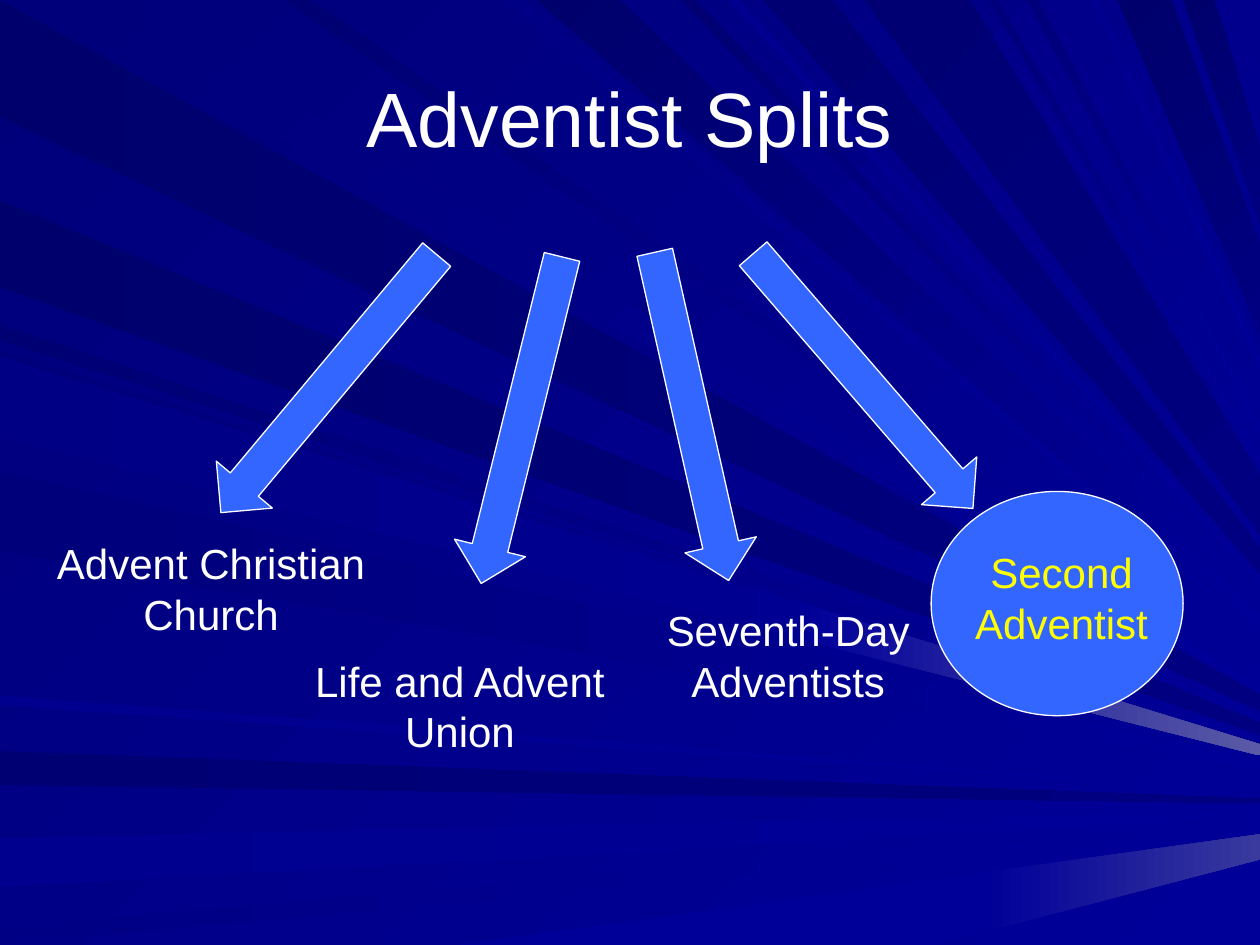
from pptx import Presentation
from pptx.dml.color import RGBColor
from pptx.enum.shapes import MSO_SHAPE
from pptx.enum.text import MSO_ANCHOR, PP_ALIGN
from pptx.util import Inches, Pt

WHITE = RGBColor(0xFF, 0xFF, 0xFF)
YELLOW = RGBColor(0xFF, 0xFF, 0x00)
BLUE = RGBColor(0x33, 0x66, 0xFF)
BLACK_BLUE = RGBColor(0x00, 0x00, 0x6C)
MIDNIGHT = RGBColor(0x00, 0x00, 0x73)
NIGHT = RGBColor(0x00, 0x00, 0x7A)
DUSK = RGBColor(0x00, 0x00, 0x85)
DAWN = RGBColor(0x00, 0x00, 0x8E)
NAVY = RGBColor(0x00, 0x00, 0x80)
ROYAL = RGBColor(0x00, 0x00, 0x99)
INDIGO = RGBColor(0x39, 0x39, 0x9E)
LILAC = RGBColor(0x5A, 0x5A, 0xA6)

WIDTH, HEIGHT = 10, 7.5
# All rays run towards one point beyond the right edge
FOCUS_X, FOCUS_Y = 11.6, 6.4

# Edge a ray starts from, its two ends on that edge, and its colours
RAYS = [
    ("left", 0, 0.93, BLACK_BLUE, NAVY),
    ("top", 0.26, 1, NIGHT, ROYAL),
    ("left", 5.96, 6.23, MIDNIGHT, NAVY),
    ("left", 6.65, 7.04, DAWN, ROYAL),
    ("left", 7.35, 7.5, DUSK, ROYAL),
    ("bottom", 3.64, 7.42, ROYAL, ROYAL),
    ("left", 2.58, 2.7, MIDNIGHT, ROYAL),
    ("left", 1.59, 2.28, BLACK_BLUE, NAVY),
    ("top", 3.98, 4.16, DUSK, ROYAL),
    ("top", 4.26, 4.92, BLACK_BLUE, ROYAL),
    ("top", 5.4, 5.52, MIDNIGHT, ROYAL),
    ("top", 6.06, 6.61, MIDNIGHT, NAVY),
    ("top", 8.87, 9.3, BLACK_BLUE, NAVY),
    ("top", 9.39, 9.64, BLACK_BLUE, NAVY),
    ("left", 2.78, 3.42, NIGHT, ROYAL),
    ("left", 3.74, 4.37, NIGHT, ROYAL),
    ("left", 5.52, 5.6, DAWN, ROYAL),
    ("top", 2.25, 2.47, MIDNIGHT, ROYAL),
    ("top", 5.77, 5.88, DAWN, ROYAL),
    ("top", 6.86, 7.7, MIDNIGHT, NAVY),
    ("top", 7.85, 7.92, NIGHT, ROYAL),
    ("top", 8.15, 8.24, NIGHT, ROYAL),
    ("top", 8.65, 8.72, DAWN, ROYAL),
    ("left", 2.83, 3.47, DUSK, ROYAL),
]
# The same for the glowing tips, then where each one begins
TIPS = [
    ("bottom", 3.64, 7.42, ROYAL, INDIGO, 7.8),
    ("left", 2.83, 3.47, ROYAL, LILAC, 6.35),
]

# Left, top and rotation of each arrow
ARROWS = [(2.32, 1.71, 39.9), (3.85, 2, 13.9), (5.2, 1.97, 347.3), (6.56, 1.69, 319.2)]
ARROW_WIDTH, ARROW_HEIGHT = Inches(0.58), Inches(2.67)

# Name, left, top, width and colour of each branch
BRANCHES = [
    ("Advent Christian\nChurch", 0.34, 4.22, 2.67, WHITE),
    ("Life and Advent\nUnion", 2.39, 5.15, 2.52, WHITE),
    ("Second\nAdventist", 7.63, 4.29, 1.59, YELLOW),
    ("Seventh-Day\nAdventists", 5.18, 4.75, 2.15, WHITE),
]
BRANCH_HEIGHT = Inches(0.91)


def fill_gradient(fill, start, end, clockwise_angle):
    fill.gradient()
    fill.gradient_angle = -clockwise_angle % 360
    for stop, color in zip(fill.gradient_stops, (start, end)):
        stop.color.rgb = color


def edge_point(edge, offset):
    return {"left": (0, offset), "top": (offset, 0), "bottom": (offset, HEIGHT)}[edge]


def toward_focus(point, x):
    """The point at x on the line from the given point to the focus."""
    start_x, start_y = point
    share = (x - start_x) / (FOCUS_X - start_x)
    return x, start_y + share * (FOCUS_Y - start_y)


def draw_ray(slide, left, top, edge, first, second, near, far, begin=None):
    near_ends = [edge_point(edge, first), edge_point(edge, second)]
    far_ends = [toward_focus(point, WIDTH) for point in near_ends]
    if begin is not None:
        near_ends = [toward_focus(point, begin) for point in near_ends]
    corners = [(left + Inches(x), top + Inches(y)) for x, y in near_ends + far_ends[::-1]]
    builder = slide.shapes.build_freeform(*corners[0])
    builder.add_line_segments(corners[1:], close=True)
    ray = builder.convert_to_shape()
    ray.shadow.inherit = False
    ray.line.fill.background()
    fill_gradient(ray.fill, near, far, 45 if edge == "top" else 0)


def draw_rays(slide, left, top):
    for ray in RAYS + TIPS:
        draw_ray(slide, left, top, *ray)


def add_label(slide, text, left, top, width, height, size, color, wrap=False):
    label = slide.shapes.add_textbox(left, top, width, height)
    frame = label.text_frame
    frame.word_wrap = wrap
    frame.text = text
    for paragraph in frame.paragraphs:
        paragraph.alignment = PP_ALIGN.CENTER
        paragraph.font.name = "Arial"
        paragraph.font.size = Pt(size)
        paragraph.font.color.rgb = color
    return label


def add_outlined(slide, kind, left, top, width, height):
    outlined = slide.shapes.add_shape(kind, left, top, width, height)
    outlined.shadow.inherit = False
    outlined.fill.solid()
    outlined.fill.fore_color.rgb = BLUE
    outlined.line.color.rgb = WHITE
    outlined.line.width = Pt(0.75)
    return outlined


def draw_title(slide, left, top, width, height):
    title = add_label(slide, "Adventist Splits", left, top, width, height, 44, WHITE, wrap=True)
    title.text_frame.vertical_anchor = MSO_ANCHOR.MIDDLE


def draw_splits(slide, left, top):
    """Arrows leading to the branches, one of which is circled."""
    for x, y, rotation in ARROWS:
        arrow = add_outlined(slide, MSO_SHAPE.DOWN_ARROW, left + Inches(x), top + Inches(y),
                             ARROW_WIDTH, ARROW_HEIGHT)
        arrow.rotation = rotation
    add_outlined(slide, MSO_SHAPE.OVAL, left + Inches(7.39), top + Inches(3.9),
                 Inches(2), Inches(1.78))
    for name, x, y, width, color in BRANCHES:
        add_label(slide, name, left + Inches(x), top + Inches(y), Inches(width),
                  BRANCH_HEIGHT, 24, color)


def main():
    deck = Presentation()
    deck.slide_width, deck.slide_height = Inches(WIDTH), Inches(HEIGHT)
    slide = deck.slides.add_slide(deck.slide_layouts[6])
    fill_gradient(slide.background.fill, NIGHT, ROYAL, 45)
    draw_rays(slide, Inches(0), Inches(0))
    draw_title(slide, Inches(0.5), Inches(0.3), Inches(9), Inches(1.25))
    draw_splits(slide, Inches(0), Inches(0))
    deck.save("out.pptx")


if __name__ == "__main__":
    main()
